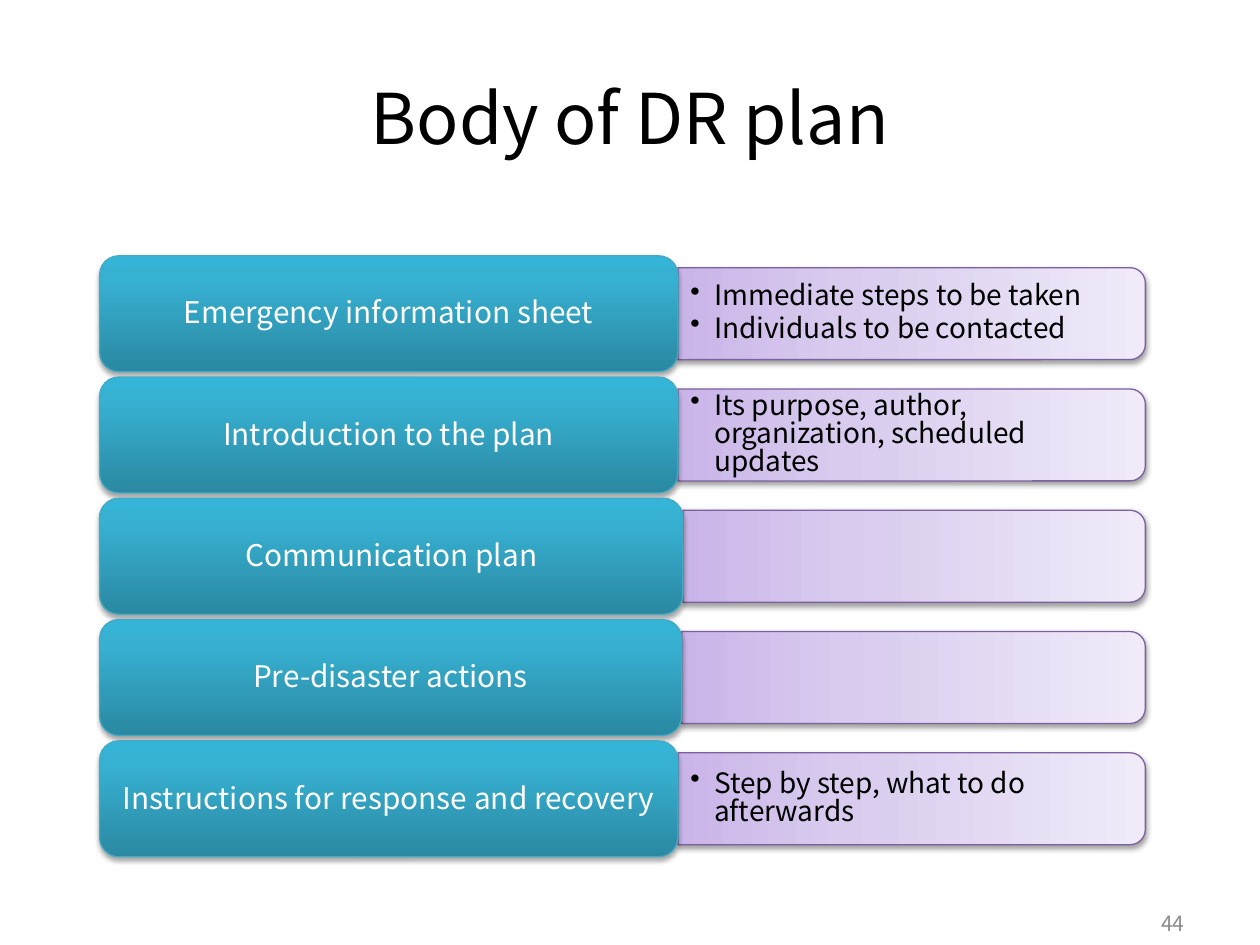
import lxml.etree as et
import pptx
import pptx.dml.color
import pptx.enum.shapes
import pptx.enum.text
import pptx.oxml.ns
import pptx.util

Inches, Pt = pptx.util.Inches, pptx.util.Pt
Shape = pptx.enum.shapes.MSO_SHAPE
Align = pptx.enum.text.PP_ALIGN
Anchor = pptx.enum.text.MSO_ANCHOR
qn = pptx.oxml.ns.qn


def color(code):
    return pptx.dml.color.RGBColor.from_string(code)


def node(root, tag, **attrs):
    """Add a drawing element below root."""
    return et.SubElement(root, qn("a:" + tag), attrs)


class Deck:
    face = "Noto Sans CJK KR"
    blue = {"stops": [(0, "2A88A2"), (80, "37B1D2"), (100, "34B4D6")],
            "line": "46AAC5", "alpha": 35, "dist": 1.8}
    lilac = {"stops": [(0, "C9B5E8"), (35, "D8CBEE"), (100, "F0EAF9")],
             "line": "7D60A0", "alpha": 38, "dist": 1.6}
    title = {"size": 40, "ink": "000000", "para": {"alignment": Align.CENTER}}
    label = {"size": 17, "ink": "FFFFFF", "pad": (0.07, 0.04),
             "para": {"alignment": Align.CENTER, "line_spacing": 0.9}}
    points = {"size": 16, "ink": "000000", "bullet": True,
              "para": {"line_spacing": Pt(16), "space_after": Pt(2.4)}}
    number = {"size": 12, "ink": "8C8C8C", "para": {"alignment": Align.RIGHT}}

    def __init__(self, wide, high):
        self.show = pptx.Presentation()
        self.show.slide_width = Inches(wide)
        self.show.slide_height = Inches(high)
        self.slide = self.show.slides.add_slide(self.show.slide_layouts[6])

    def panel(self, kind, box, look, turn=0):
        """Draw a shape with a gradient and a soft shadow."""
        shape = self.slide.shapes.add_shape(kind, *map(Inches, box))
        shape.rotation = turn
        shape.fill.gradient()
        shape.fill.gradient_angle = 90
        props = shape.element.spPr
        stops = props.find(".//" + qn("a:gsLst"))
        for stop in list(stops):
            stops.remove(stop)
        for place, code in look["stops"]:
            stop = node(stops, "gs", pos=str(place * 1000))
            node(stop, "srgbClr", val=code)
        shape.line.color.rgb = color(look["line"])
        shape.line.width = Pt(0.75)
        shape.shadow.inherit = False
        shade = node(props.find(qn("a:effectLst")), "outerShdw",
                     blurRad=str(Pt(3.1)), dist=str(Pt(look["dist"])),
                     dir="5400000", rotWithShape="0")
        tint = node(shade, "srgbClr", val="000000")
        node(tint, "alpha", val=str(look["alpha"] * 1000))

    def text(self, box, lines, look):
        """Write one paragraph for each line."""
        frame = self.slide.shapes.add_textbox(*map(Inches, box)).text_frame
        side, edge = map(Inches, look.get("pad", (0.1, 0.05)))
        form = {"word_wrap": True, "vertical_anchor": Anchor.MIDDLE,
                "margin_left": side, "margin_right": side,
                "margin_top": edge, "margin_bottom": edge}
        for name, value in form.items():
            setattr(frame, name, value)
        frame.text = "\n".join(lines)
        for para in frame.paragraphs:
            for name, value in look["para"].items():
                setattr(para, name, value)
            font = para.runs[0].font
            for name, value in {"name": self.face, "size": Pt(look["size"])}.items():
                setattr(font, name, value)
            font.color.rgb = color(look["ink"])
            if look.get("bullet"):
                props = para._p.get_or_add_pPr()
                props.set("marL", str(Inches(0.19)))
                props.set("indent", str(Inches(-0.19)))
                node(props, "buChar", char="•")

    def row(self, top, name, lines, wide):
        """Draw a blue label with its lilac detail bar."""
        left, high, right = 0.79, 0.92, 9.09
        seam = left + wide
        span, thick = right - seam, 0.73
        # The bar stands upright and is turned about its centre
        bar = ((seam + right - thick) / 2, top + (high - span) / 2, thick, span)
        self.panel(Shape.ROUND_2_SAME_RECTANGLE, bar, self.lilac, 90)
        if lines:
            self.text((seam, top + 0.13, span - 0.03, 0.66), lines, self.points)
        self.panel(Shape.ROUNDED_RECTANGLE, (left, top, wide, high), self.blue)
        self.text((left + 0.04, top + 0.05, wide - 0.08, 0.83), [name], self.label)


def main():
    deck = Deck(10, 7.5)

    # Title
    deck.text((0.5, 0.3, 9, 1.25), ["Body of DR plan"], deck.title)

    # Plan parts: label, details, label width
    rows = [
        ("Emergency information sheet",
         ["Immediate steps to be taken", "Individuals to be contacted"], 4.59),
        ("Introduction to the plan",
         ["Its purpose, author, organization, scheduled updates"], 4.59),
        ("Communication plan", [], 4.63),
        ("Pre-disaster actions", [], 4.62),
        ("Instructions for response and recovery",
         ["Step by step, what to do afterwards"], 4.59),
    ]
    first, last = 2.03, 5.88
    step = (last - first) / (len(rows) - 1)
    for i, (name, lines, wide) in enumerate(rows):
        deck.row(first + i * step, name, lines, wide)

    # Page number
    deck.text((7.17, 7.13, 2.33, 0.4), ["44"], deck.number)

    deck.show.save("out.pptx")


if __name__ == "__main__":
    main()
